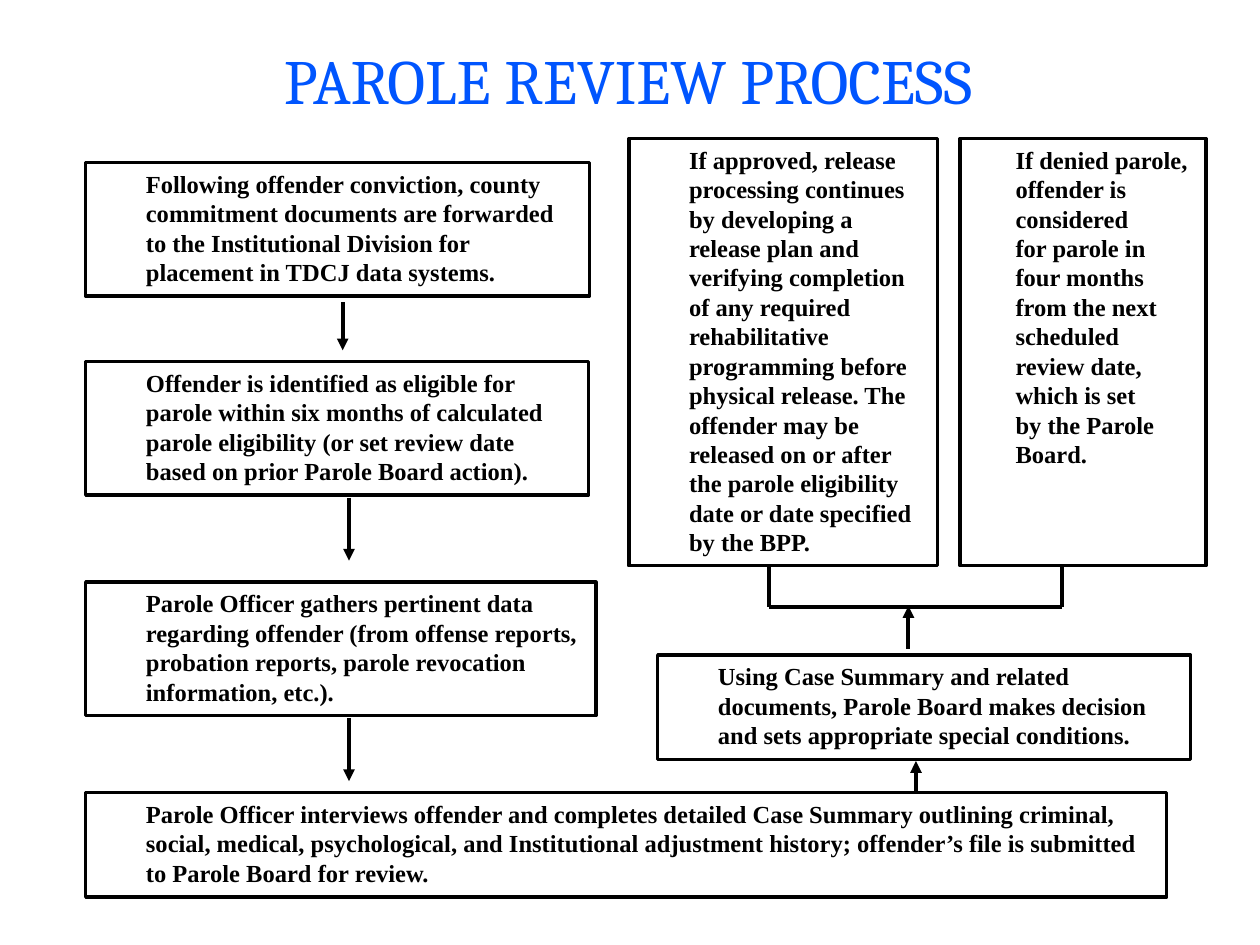
from lxml.etree import SubElement
from pptx import Presentation
from pptx.dml.color import RGBColor as Rgb
from pptx.enum.shapes import MSO_CONNECTOR as Link, MSO_SHAPE as Shape
from pptx.enum.text import MSO_ANCHOR as Anchor, PP_ALIGN as Align
from pptx.oxml.ns import qn
from pptx.util import Inches, Pt

BLACK = "000000"
BLUE = "0055FE"

LEFT = 0.68
HIGH = 1.06
LOW = 0.83
TOP = 1.1
TALL = 3.39
BAR = 4.82
FORK = (6.1, 8.43)

STEPS = [
    (LEFT, 1.29, 4, HIGH, [
        "Following offender conviction, county commitment documents are forwarded",
        "to the Institutional Division for placement in TDCJ data systems."]),
    (LEFT, 2.87, 3.99, HIGH, [
        "Offender is identified as eligible for parole within six months of calculated "
        "parole eligibility (or set review date based on prior Parole Board action)."]),
    (LEFT, 4.62, 4.05, HIGH, [
        "Parole Officer gathers pertinent data regarding offender (from offense reports, "
        "probation reports, parole revocation information, etc.)."]),
    (LEFT, 6.29, 8.58, LOW, [
        "Parole Officer interviews offender and completes detailed Case Summary outlining criminal,",
        "social, medical, psychological, and Institutional adjustment history; "
        "offender’s file is submitted",
        "to Parole Board for review."]),
    (5.22, 5.2, 4.23, LOW, [
        "Using Case Summary and related documents, Parole Board makes decision "
        "and sets appropriate special conditions."]),
    (4.99, TOP, 2.45, TALL, [
        "If approved, release processing continues by developing a release plan and "
        "verifying completion of any required rehabilitative programming before physical "
        "release. The offender may be released on or after the parole eligibility date "
        "or date specified by the BPP."]),
    (7.62, TOP, 1.95, TALL, [
        "If denied parole, offender is considered",
        "for parole in four months from the next scheduled review date, which is set",
        "by the Parole Board."]),
]

ARROWS = [
    (2.72, 2.4, 2.78),
    (2.77, 3.95, 4.45),
    (2.77, 5.7, 6.2),
    (7.27, 6.29, 6.04),
    (7.21, 5.15, 4.81),
]


def color(code):
    return Rgb.from_string(code)


def add_run(para, text, face, size, code, bold=False):
    run = para.add_run()
    run.text = text
    font = run.font
    font.name, font.size, font.bold = face, Pt(size), bold
    font.color.rgb = color(code)


def add_title(slide, text):
    title = slide.shapes.title
    title.left, title.top = Inches(2), Inches(0.35)
    title.width, title.height = Inches(5.97), Inches(0.56)
    frame = title.text_frame
    frame.word_wrap = False
    frame.vertical_anchor = Anchor.MIDDLE
    para = frame.paragraphs[0]
    para.alignment = Align.CENTER
    add_run(para, text, "Cambria", 36, BLUE)


def add_step(slide, left, top, width, height, lines):
    box = slide.shapes.add_shape(
        Shape.RECTANGLE, Inches(left), Inches(top), Inches(width), Inches(height))
    box.shadow.inherit = False
    box.fill.background()
    box.line.color.rgb = color(BLACK)
    box.line.width = Pt(2)
    frame = box.text_frame
    frame.word_wrap = True
    frame.vertical_anchor = Anchor.TOP
    frame.margin_left = Inches(0.06 if left == 7.62 else 0.1)
    para = frame.paragraphs[0]
    para.alignment = Align.LEFT
    para._p.get_or_add_pPr().set("marL", str(Inches(0.38)))
    for i, line in enumerate(lines):
        if i:
            para.add_line_break()
        add_run(para, line, "Times New Roman", 14, BLACK, True)


def add_line(slide, x1, y1, x2, y2, arrow=False):
    line = slide.shapes.add_connector(
        Link.STRAIGHT, Inches(x1), Inches(y1), Inches(x2), Inches(y2))
    line.line.color.rgb = color(BLACK)
    line.line.width = Pt(2.25)
    if arrow:
        SubElement(line.line._get_or_add_ln(), qn("a:tailEnd"), type="triangle")
    SubElement(line._element.spPr, qn("a:effectLst"))


def main():
    deck = Presentation()
    deck.slide_width, deck.slide_height = Inches(10), Inches(7.5)
    slide = deck.slides.add_slide(deck.slide_layouts[5])
    add_title(slide, "PAROLE REVIEW PROCESS")
    for step in STEPS:
        add_step(slide, *step)
    for x, start, end in ARROWS:
        add_line(slide, x, start, x, end, True)
    for x in FORK:
        add_line(slide, x, TOP + TALL, x, BAR)
    add_line(slide, FORK[0], BAR, FORK[1], BAR)
    deck.save("out.pptx")


if __name__ == "__main__":
    main()
